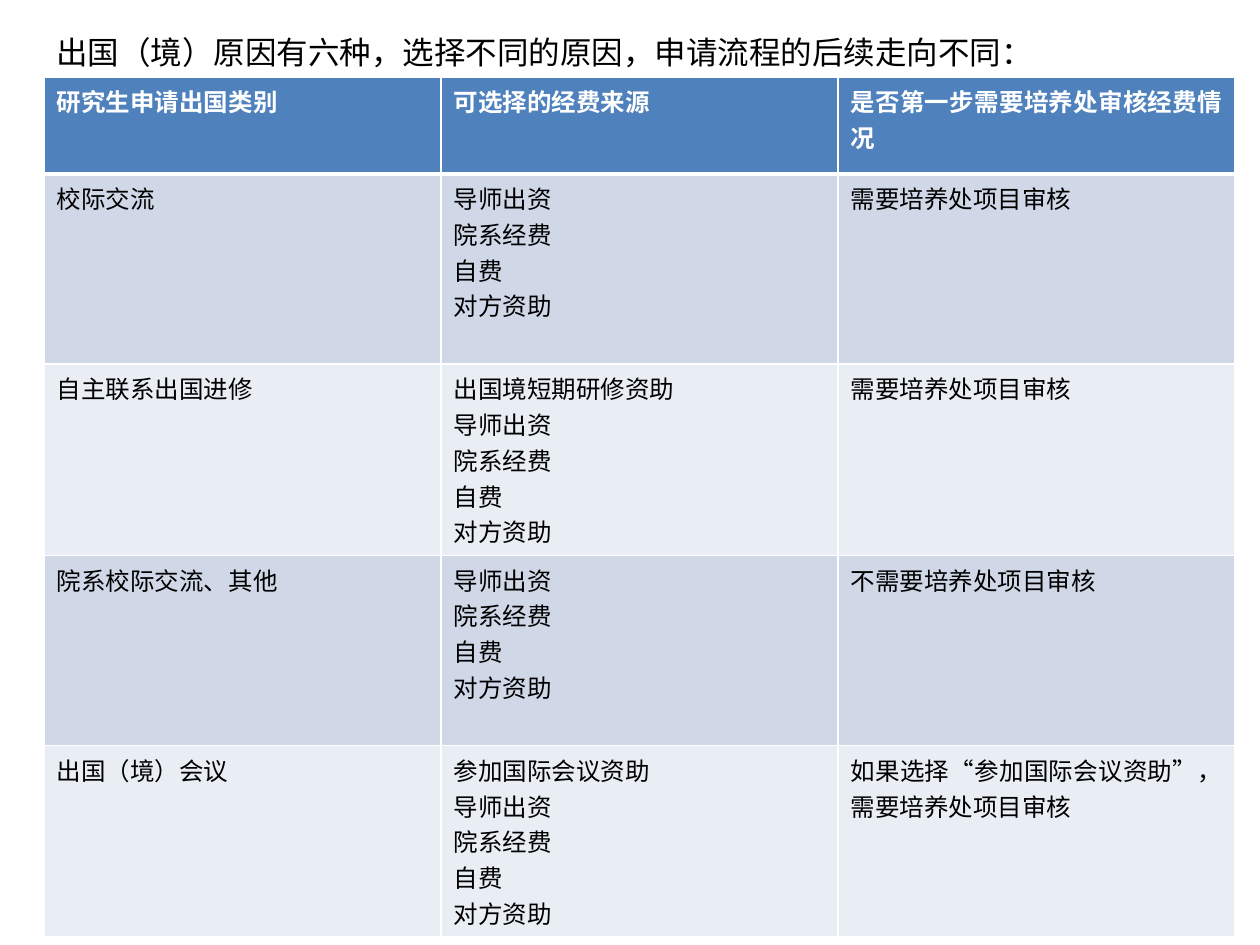
from lxml.etree import SubElement
from pptx import Presentation
from pptx.dml.color import RGBColor
from pptx.enum.lang import MSO_LANGUAGE_ID
from pptx.enum.text import MSO_AUTO_SIZE, PP_ALIGN
from pptx.oxml.ns import qn
from pptx.util import Inches, Pt

COLORS = {
    "header": "4F81BD",
    "odd": "D0D8E8",
    "even": "E9EDF4",
    "border": "FFFFFF",
    "light": "FFFFFF",
    "dark": "000000",
}
EAST_ASIAN_FONT = "Noto Sans CJK SC"
COLUMNS, ROWS = 200, 150
LEFT = 7

TITLE = "出国（境）原因有六种，选择不同的原因，申请流程的后续走向不同："
HEADINGS = ["研究生申请出国类别", "可选择的经费来源", "是否第一步需要培养处审核经费情况"]
COMMON_SOURCES = ["导师出资", "院系经费", "自费", "对方资助"]
REVIEW = "需要培养处项目审核"
CATEGORIES = [
    ("校际交流", [], REVIEW),
    ("自主联系出国进修", ["出国境短期研修资助"], REVIEW),
    ("院系校际交流、其他", [], "不" + REVIEW),
    ("出国（境）会议", ["参加国际会议资助"], "如果选择“参加国际会议资助”，" + REVIEW),
]
COLUMN_WIDTH = 63
ROW_HEIGHTS = [15.4, 30.2, 30.2, 30.2, 26.2]


class SlideBuilder:
    def __init__(self, deck):
        self.page = deck.slides.add_slide(deck.slide_layouts[6])
        self.column = deck.slide_width / COLUMNS
        self.row = deck.slide_height / ROWS

    def across(self, columns):
        return round(self.column * columns)

    def down(self, rows):
        return round(self.row * rows)

    def area(self, left, top, width, height):
        return self.across(left), self.down(top), self.across(width), self.down(height)

    def fill_text(self, frame, lines, color, alignment=None, **style):
        frame.text = "\n".join(lines)
        values = {"language_id": MSO_LANGUAGE_ID.SIMPLIFIED_CHINESE, **style}
        for para in frame.paragraphs:
            para.alignment = alignment
            for span in para.runs:
                for name, value in values.items():
                    setattr(span.font, name, value)
                span.font.color.rgb = RGBColor.from_string(COLORS[color])
                properties = span._r.get_or_add_rPr()
                SubElement(properties, qn("a:ea"), typeface=EAST_ASIAN_FONT)

    def title(self, text, left, top, width, height):
        box = self.page.shapes.add_textbox(*self.area(left, top, width, height))
        frame = box.text_frame
        self.fill_text(frame, [text], "dark", name="Calibri", size=Pt(18))
        frame.word_wrap = False
        frame.auto_size = MSO_AUTO_SIZE.SHAPE_TO_FIT_TEXT

    def borders(self, cell, bottom):
        properties = cell._tc.get_or_add_tcPr()
        widths = {"lnL": 1, "lnR": 1, "lnT": 1, "lnB": bottom}
        for side, points in widths.items():
            line = SubElement(properties, qn(f"a:{side}"), w=str(Pt(points)))
            fill = SubElement(line, qn("a:solidFill"))
            SubElement(fill, qn("a:srgbClr"), val=COLORS["border"])

    def cell(self, cell, lines, fill, is_header):
        self.borders(cell, 3 if is_header else 1)
        cell.fill.solid()
        cell.fill.fore_color.rgb = RGBColor.from_string(COLORS[fill])
        self.fill_text(
            cell.text_frame,
            lines,
            "light" if is_header else "dark",
            PP_ALIGN.JUSTIFY,
            name=EAST_ASIAN_FONT,
            size=Pt(14),
            bold=is_header,
        )

    def table(self, records, left, top, column_width, row_heights):
        count = len(records[0])
        area = self.area(left, top, column_width * count, sum(row_heights))
        table = self.page.shapes.add_table(len(records), count, *area).table
        for column in table.columns:
            column.width = self.across(column_width)
        for row, height in zip(table.rows, row_heights):
            row.height = self.down(height)
        for index, record in enumerate(records):
            fill = "header" if index == 0 else "odd" if index % 2 else "even"
            for position, lines in enumerate(record):
                self.cell(table.cell(index, position), lines, fill, index == 0)


def main():
    deck = Presentation()
    deck.slide_width, deck.slide_height = Inches(10), Inches(7.5)
    builder = SlideBuilder(deck)
    records = [[[heading] for heading in HEADINGS]]
    for category, extra_sources, review in CATEGORIES:
        records.append([[category], extra_sources + COMMON_SOURCES, [review]])
    builder.table(records, LEFT, 12.2, COLUMN_WIDTH, ROW_HEIGHTS)
    builder.title(TITLE, LEFT, 4.2, 160.6, 8)
    deck.save("out.pptx")


if __name__ == "__main__":
    main()
